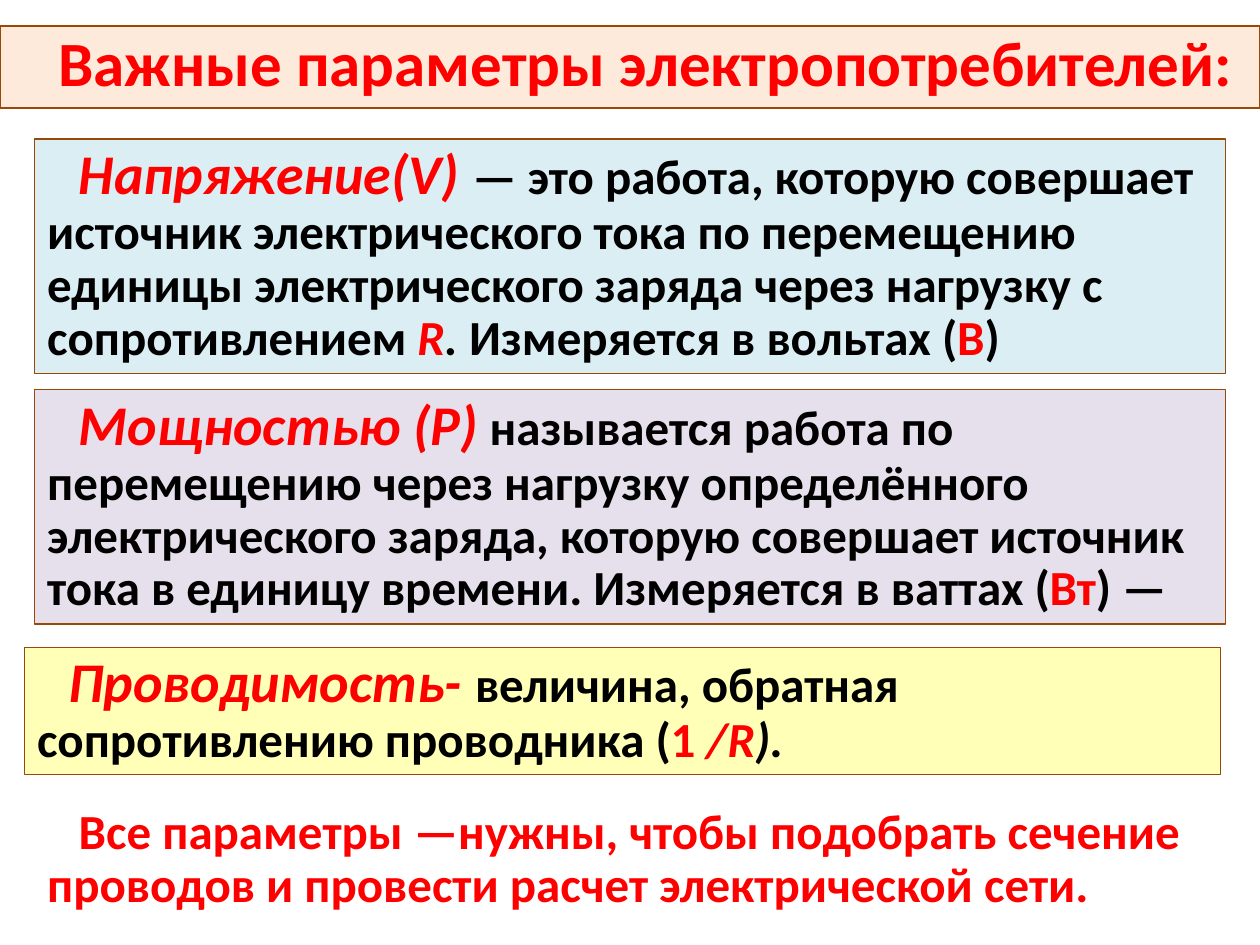
import pptx
import pptx.dml.color
import pptx.enum.shapes
import pptx.enum.text
import pptx.util

Pt = pptx.util.Pt
ANCHOR = pptx.enum.text.MSO_ANCHOR
ALIGN = pptx.enum.text.PP_ALIGN

COLORS = {
    "red": "FF0000",
    "black": "000000",
    "border": "984807",
    "peach": "FDEADA",
    "blue": "DBEEF4",
    "violet": "E6E0EC",
    "yellow": "FFFFB7",
}


class SlideBuilder:
    font = "Calibri"
    title_size = 36
    term_size = 32
    body_size = 28
    first_line_indent = 18
    line_spacing = 0.9
    border_width = 0.75

    def __init__(self, page):
        self.page = page

    def color(self, name):
        return pptx.dml.color.RGBColor.from_string(COLORS[name])

    def fill_text(self, box, spans, anchor, align=ALIGN.LEFT):
        frame = box.text_frame
        frame.word_wrap = True
        frame.auto_size = pptx.enum.text.MSO_AUTO_SIZE.SHAPE_TO_FIT_TEXT
        frame.vertical_anchor = anchor
        para = frame.paragraphs[0]
        para.alignment = align
        para.line_spacing = self.line_spacing
        para._p.get_or_add_pPr().set("indent", str(Pt(self.first_line_indent)))
        for text, size, color, italic in spans:
            span = para.add_run()
            span.text = text
            span.font.name = self.font
            span.font.size = Pt(size)
            span.font.bold = True
            span.font.italic = italic
            span.font.color.rgb = self.color(color)

    def panel(self, bounds, fill, spans, anchor=ANCHOR.MIDDLE, align=ALIGN.LEFT):
        box = self.page.shapes.add_shape(
            pptx.enum.shapes.MSO_SHAPE.RECTANGLE, *map(Pt, bounds)
        )
        box.shadow.inherit = False
        box.fill.solid()
        box.fill.fore_color.rgb = self.color(fill)
        box.line.color.rgb = self.color("border")
        box.line.width = Pt(self.border_width)
        self.fill_text(box, spans, anchor, align)

    def title(self, bounds, text):
        spans = [(text, self.title_size, "red", False)]
        self.panel(bounds, "peach", spans, ANCHOR.TOP, ALIGN.CENTER)

    def definition(self, bounds, fill, term, parts):
        spans = [(term, self.term_size, "red", True)]
        spans += [(text, self.body_size, color, italic) for text, color, italic in parts]
        self.panel(bounds, fill, spans)

    def conclusion(self, bounds, text):
        box = self.page.shapes.add_textbox(*map(Pt, bounds))
        self.fill_text(box, [(text, self.body_size, "red", False)], ANCHOR.MIDDLE)


def main():
    deck = pptx.Presentation()
    deck.slide_width = Pt(720)
    deck.slide_height = Pt(540)
    builder = SlideBuilder(deck.slides.add_slide(deck.slide_layouts[6]))

    builder.title((0, 14.9, 720, 46.8), "Важные параметры электропотребителей:")
    builder.definition(
        (19.9, 79.4, 680.4, 133.9),
        "blue",
        "Напряжение(V) ",
        [
            (
                "— это работа, которую совершает источник электрического тока "
                "по перемещению единицы электрического заряда через нагрузку "
                "с сопротивлением ",
                "black",
                False,
            ),
            ("R", "red", True),
            (". ", "black", True),
            ("Измеряется в вольтах (", "black", False),
            ("В", "red", False),
            (")", "black", False),
        ],
    )
    builder.definition(
        (19.9, 222.7, 680.4, 133.9),
        "violet",
        "Мощностью (Р)",
        [
            (
                " называется работа по перемещению через нагрузку определённого "
                "электрического заряда, которую совершает источник тока в единицу "
                "времени. Измеряется в ваттах (",
                "black",
                False,
            ),
            ("Вт", "red", False),
            (") —", "black", False),
        ],
    )
    builder.definition(
        (14.1, 370, 683.3, 72.7),
        "yellow",
        "Проводимость- ",
        [
            ("величина, обратная сопротивлению проводника (", "black", False),
            ("1 ", "red", False),
            ("/R", "red", True),
            (").", "black", True),
        ],
    )
    builder.conclusion(
        (19.9, 457.2, 683.3, 68.4),
        "Все параметры —нужны, чтобы подобрать сечение проводов "
        "и провести расчет электрической сети.",
    )
    deck.save("out.pptx")


if __name__ == "__main__":
    main()
